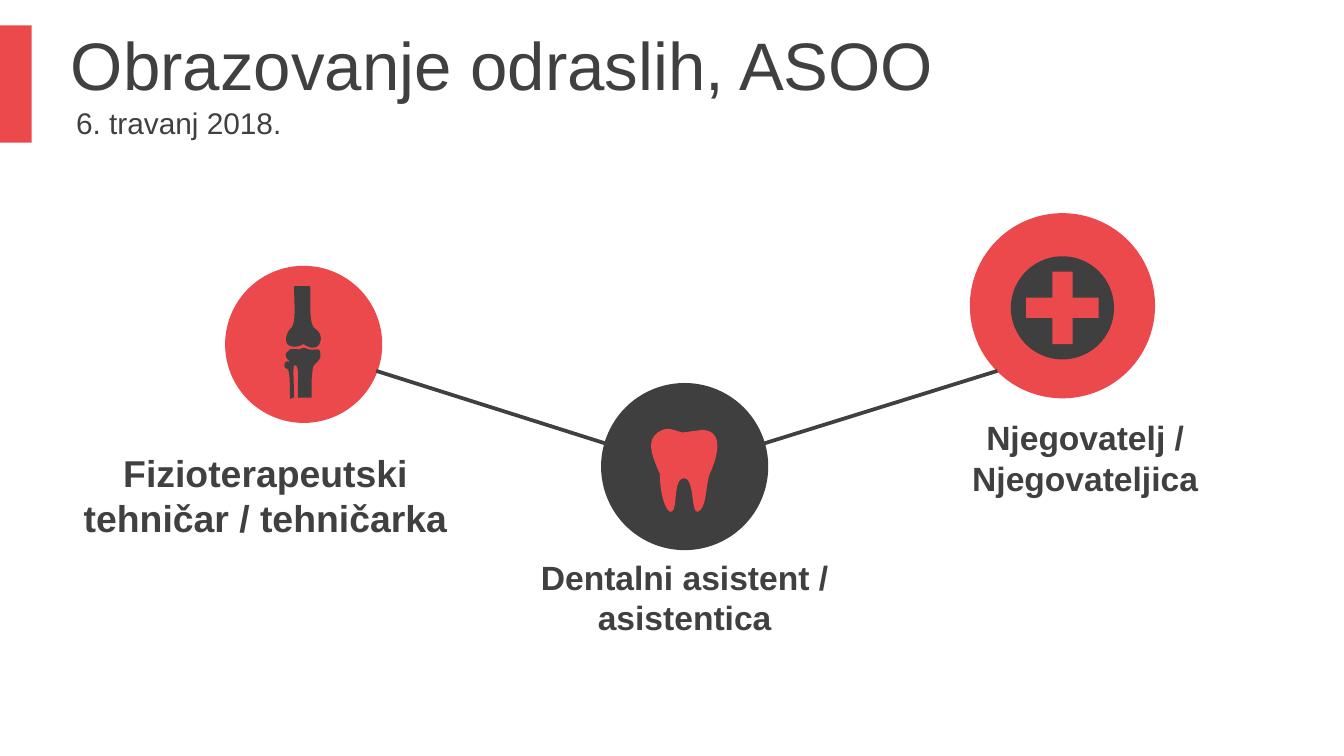
from dataclasses import dataclass

from lxml import etree
from pptx import Presentation
from pptx.dml.color import RGBColor
from pptx.enum.shapes import MSO_CONNECTOR, MSO_SHAPE
from pptx.enum.text import MSO_ANCHOR, PP_ALIGN
from pptx.oxml.ns import qn
from pptx.util import Cm, Pt

RECTANGLE = MSO_SHAPE.RECTANGLE
OVAL = MSO_SHAPE.OVAL
CROSS = MSO_SHAPE.CROSS
STRAIGHT = MSO_CONNECTOR.STRAIGHT
MIDDLE = MSO_ANCHOR.MIDDLE
LEFT, CENTER = PP_ALIGN.LEFT, PP_ALIGN.CENTER


@dataclass(frozen=True)
class Theme:
    accent: RGBColor = RGBColor(0xEB, 0x49, 0x4B)
    dark: RGBColor = RGBColor(0x3F, 0x3F, 0x3F)
    text: RGBColor = RGBColor(0x40, 0x40, 0x40)
    font: str = "Arial"
    title: int = 36
    date: int = 16
    label: int = 18
    large_label: int = 20
    line: int = 2


THEME = Theme()

# Icon outlines: a start point, then lines (2 numbers) and Bézier curves (6)
ICON_UNIT = 0.0254  # cm
CURVE_STEPS = 10
TOOTH = [
    [(8, 1), (-6, 7, 0, 20, 6, 34), (6, 51, 11, 62, 14, 62),
     (20, 62, 15, 37, 24, 37), (32, 37, 29, 63, 34, 62),
     (41, 60, 40, 42, 43, 34), (49, 21, 54, 2, 38, 1), (23, 3),
     (18, 2, 13, -1, 8, 1)],
]
KNEE = [
    [(7, 0), (19, 0), (20, 11, 17, 28, 23, 32), (29, 36, 27, 43, 24, 45),
     (20, 47, 17, 45, 14, 43), (11, 45, 7, 46, 3, 44),
     (-1, 41, 2, 34, 4, 32), (9, 29, 7, 13, 7, 0)],
    [(14, 46), (16, 46, 17, 47, 18, 47), (20, 48, 25, 46, 26, 48),
     (29, 56, 21, 57, 21, 61), (20, 68, 20, 69, 20, 83), (10, 83),
     (9, 75, 12, 57, 7, 59), (6, 60, 7, 75, 7, 83), (5, 83, 6, 83, 4, 84),
     (4, 55, 2, 64, 0, 60), (-1, 55, 3, 56, 4, 56), (0, 53, 0, 50, 3, 48),
     (4, 46, 8, 47, 11, 47), (12, 47, 12, 46, 14, 46)],
]


def paint(shape, color):
    shape.shadow.inherit = False
    shape.fill.solid()
    shape.fill.fore_color.rgb = color
    shape.line.fill.background()


def add_block(slide, kind, left, top, width, height, color):
    shape = slide.shapes.add_shape(kind, Cm(left), Cm(top), Cm(width), Cm(height))
    paint(shape, color)
    return shape


def add_centered(slide, kind, center_x, center_y, size, color):
    return add_block(slide, kind, center_x - size / 2, center_y - size / 2,
                     size, size, color)


def add_text(slide, text, left, top, width, height, size, bold=False, align=LEFT):
    box = slide.shapes.add_textbox(Cm(left), Cm(top), Cm(width), Cm(height))
    frame = box.text_frame
    frame.word_wrap = True
    frame.vertical_anchor = MIDDLE
    paragraph = frame.paragraphs[0]
    paragraph.text = text
    paragraph.alignment = align
    font_format = {"name": THEME.font, "size": Pt(size), "bold": bold}
    for attribute, value in font_format.items():
        setattr(paragraph.font, attribute, value)
    paragraph.font.color.rgb = THEME.text


def add_link(slide, start_x, start_y, end_x, end_y):
    link = slide.shapes.add_connector(
        STRAIGHT, Cm(start_x), Cm(start_y), Cm(end_x), Cm(end_y))
    link.line.color.rgb = THEME.text
    link.line.width = Pt(THEME.line)
    etree.SubElement(link._element.spPr, qn("a:effectLst"))


def trace(outline):
    """Turn an outline into points, sampling its curves."""
    points = [outline[0]]
    for segment in outline[1:]:
        if len(segment) == 2:
            points.append(segment)
            continue
        corners = [points[-1], segment[:2], segment[2:4], segment[4:]]
        for step in range(1, CURVE_STEPS + 1):
            t = step / CURVE_STEPS
            weights = ((1 - t) ** 3, 3 * t * (1 - t) ** 2, 3 * t ** 2 * (1 - t), t ** 3)
            points.append(tuple(
                sum(weight * corner[axis] for weight, corner in zip(weights, corners))
                for axis in (0, 1)))
    return points


def add_icon(slide, outlines, left, top, color):
    builder = None
    for outline in outlines:
        points = [(Cm(left + x * ICON_UNIT), Cm(top + y * ICON_UNIT))
                  for x, y in trace(outline)]
        if builder is None:
            builder = slide.shapes.build_freeform(*points[0])
        else:
            builder.move_to(*points[0])
        builder.add_line_segments(points[1:], close=True)
    paint(builder.convert_to_shape(), color)


def main():
    presentation = Presentation()
    presentation.slide_width = Cm(25.4)
    presentation.slide_height = Cm(14.29)
    slide = presentation.slides.add_slide(presentation.slide_layouts[6])

    # Heading
    add_block(slide, RECTANGLE, 0, 0.48, 0.6, 2.22, THEME.accent)
    add_text(slide, "Obrazovanje odraslih, ASOO", 1.09, 0.4, 19.41, 1.6, THEME.title)
    add_text(slide, "6. travanj 2018.", 1.19, 1.92, 19.41, 0.79, THEME.date)

    # Circles: center, diameter, color
    for circle in ((5.74, 6.51, 2.97, THEME.accent),
                   (12.94, 8.82, 3.16, THEME.dark),
                   (20.08, 5.78, 3.5, THEME.accent)):
        add_centered(slide, OVAL, *circle)

    # Links between the circles
    add_link(slide, 7.11, 7.01, 11.53, 8.41)
    add_link(slide, 14.35, 8.41, 18.85, 7.01)

    # Icons
    add_icon(slide, KNEE, 5.38, 5.41, THEME.dark)
    add_icon(slide, TOOTH, 12.32, 8.1, THEME.accent)
    add_centered(slide, OVAL, 20.08, 5.82, 1.95, THEME.dark)
    plus = add_centered(slide, CROSS, 20.08, 5.82, 1.37, THEME.accent)
    plus.adjustments[0] = 0.36

    # Labels
    for text, left, top, width, height, size in (
            ("Fizioterapeutski tehničar / tehničarka",
             0.97, 8.38, 8.1, 1.96, THEME.large_label),
            ("Dentalni asistent / asistentica",
             9.37, 10.39, 7.14, 1.8, THEME.label),
            ("Njegovatelj / Njegovateljica",
             16.94, 7.75, 7.14, 1.8, THEME.label)):
        add_text(slide, text, left, top, width, height, size, bold=True, align=CENTER)

    presentation.save("out.pptx")


if __name__ == "__main__":
    main()
